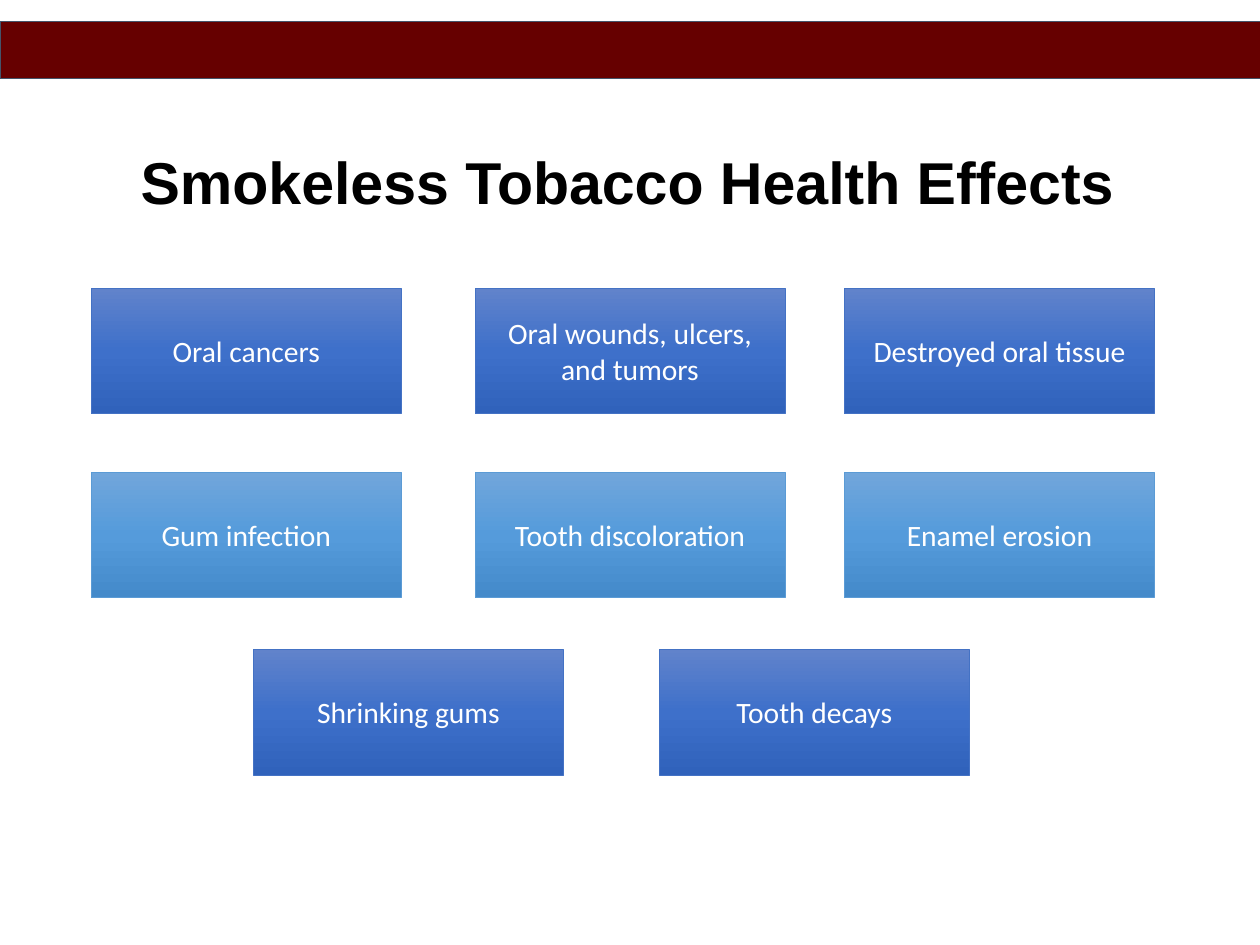
from copy import deepcopy

from pptx import Presentation
from pptx.dml.color import RGBColor
from pptx.enum.shapes import MSO_SHAPE
from pptx.enum.text import MSO_ANCHOR, MSO_AUTO_SIZE, PP_ALIGN
from pptx.oxml.ns import qn
from pptx.util import Inches, Pt

RECT = MSO_SHAPE.RECTANGLE
MIDDLE = MSO_ANCHOR.MIDDLE
CENTER = PP_ALIGN.CENTER
FIT = MSO_AUTO_SIZE.SHAPE_TO_FIT_TEXT

ROYAL = (["6183CB", "3E70CA", "3062BB"], "4472C4")
SKY = (["71A6DB", "559BDB", "448ACA"], "5B9BD5")
COLUMNS = [1.03, 5.36, 9.53]
ROWS = [
    (3.25, ROYAL, COLUMNS,
     ["Oral cancers", "Oral wounds, ulcers, and tumors", "Destroyed oral tissue"]),
    (5.33, SKY, COLUMNS,
     ["Gum infection", "Tooth discoloration", "Enamel erosion"]),
    (7.33, ROYAL, [2.86, 7.44], ["Shrinking gums", "Tooth decays"]),
]


def color(code):
    return RGBColor.from_string(code)


class Deck:
    title_font = "Arial"
    card_font = "Calibri"
    card_size = (3.5, 1.42)

    def __init__(self, width, height):
        self.prs = Presentation()
        self.prs.slide_width = Inches(width)
        self.prs.slide_height = Inches(height)
        self.slide = self.prs.slides.add_slide(self.prs.slide_layouts[6])

    def label(self, frame, text, size, name, code, bold=False):
        frame.vertical_anchor = MIDDLE
        para = frame.paragraphs[0]
        para.text = text
        para.alignment = CENTER
        font = para.font
        font.size = Pt(size)
        font.name = name
        font.bold = bold
        font.color.rgb = color(code)

    def title(self, text, *box):
        frame = self.slide.shapes.add_textbox(*map(Inches, box)).text_frame
        frame.word_wrap = False
        frame.auto_size = FIT
        frame.margin_left = frame.margin_right = Inches(0.06)
        frame.margin_top = frame.margin_bottom = Inches(0.06)
        self.label(frame, text, 48, self.title_font, "000000", True)

    def rect(self, box, edge, weight):
        shape = self.slide.shapes.add_shape(RECT, *map(Inches, box))
        shape.shadow.inherit = False
        shape.line.color.rgb = color(edge)
        shape.line.width = Pt(weight)
        return shape

    def band(self, fill, edge, *box):
        shape = self.rect(box, edge, 0.75)
        shape.fill.solid()
        shape.fill.fore_color.rgb = color(fill)

    def card(self, text, left, top, style):
        shades, edge = style
        shape = self.rect((left, top, *self.card_size), edge, 0.5)
        self.blend(shape, shades)
        shape.text_frame.word_wrap = True
        self.label(shape.text_frame, text, 24, self.card_font, "FFFFFF")

    def blend(self, shape, shades):
        fill = shape.fill
        fill.gradient()
        fill.gradient_angle = 270
        stops = shape.element.spPr.find(".//" + qn("a:gsLst"))
        stops.append(deepcopy(stops[0]))
        for stop, shade, place in zip(fill.gradient_stops, shades, (0, 0.5, 1)):
            stop.color.rgb = color(shade)
            stop.position = place


def main():
    deck = Deck(14.22, 10.67)
    deck.title("Smokeless Tobacco Health Effects ", 1.44, 1.58, 11.47, 0.92)
    deck.band("660000", "44546A", 0, 0.24, 14.22, 0.65)
    for top, style, lefts, texts in ROWS:
        for left, text in zip(lefts, texts):
            deck.card(text, left, top, style)
    deck.prs.save("out.pptx")


if __name__ == "__main__":
    main()
